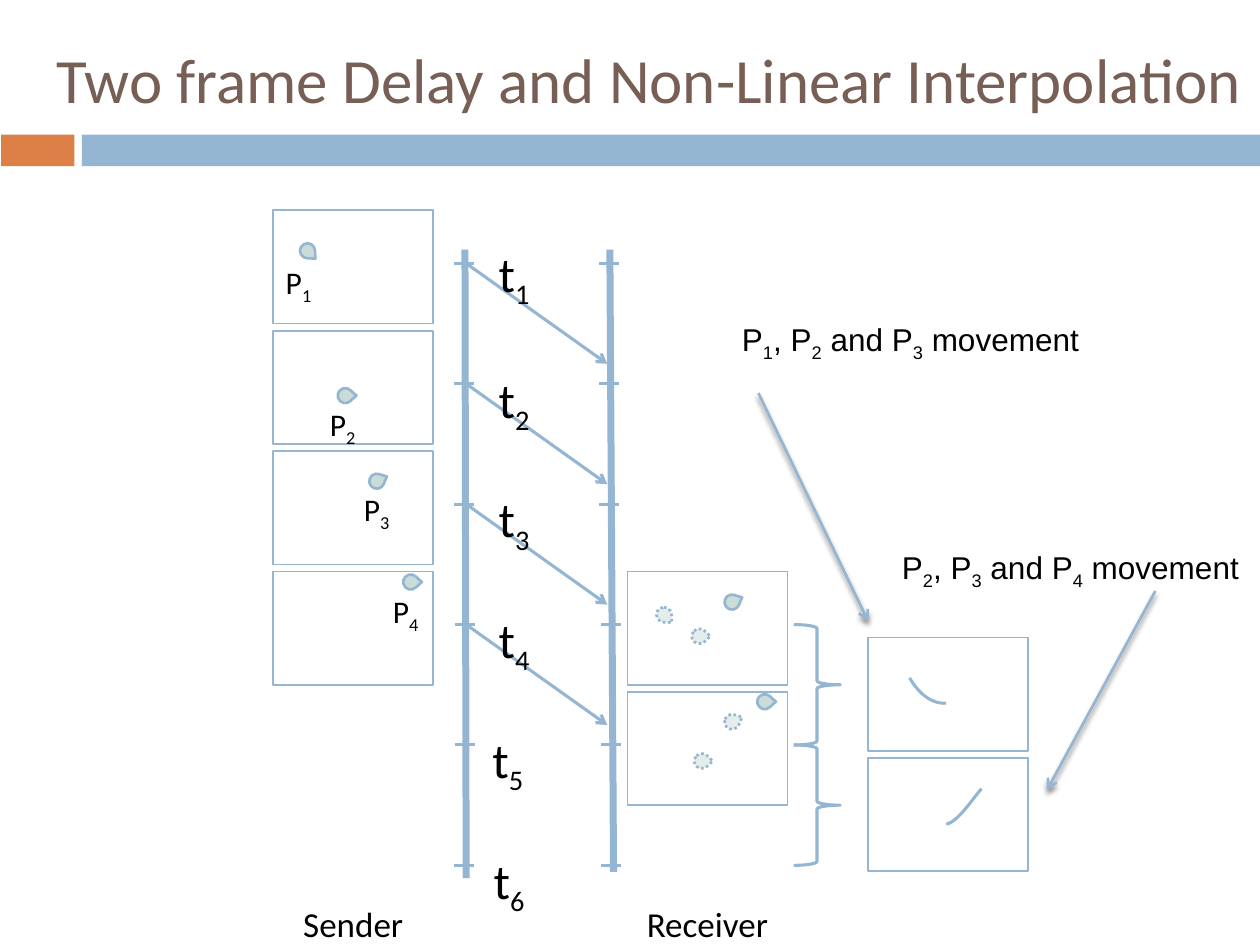
from dataclasses import dataclass

from lxml import etree
from pptx import Presentation
from pptx.dml.color import RGBColor
from pptx.enum.dml import MSO_LINE
from pptx.enum.shapes import MSO_CONNECTOR, MSO_SHAPE
from pptx.enum.text import MSO_ANCHOR, MSO_AUTO_SIZE, PP_ALIGN
from pptx.oxml.ns import qn
from pptx.util import Pt

BLUE = RGBColor(0x94, 0xB6, 0xD2)
ORANGE = RGBColor(0xDD, 0x80, 0x47)
PALE = RGBColor(0xCA, 0xDC, 0xD8)
BROWN = RGBColor(0x77, 0x5F, 0x55)
BLACK = RGBColor(0, 0, 0)

RECT, DROP, BRACE = MSO_SHAPE.RECTANGLE, MSO_SHAPE.TEAR, MSO_SHAPE.RIGHT_BRACE
STRAIGHT = MSO_CONNECTOR.STRAIGHT
DOTTED = MSO_LINE.ROUND_DOT
LEFT, CENTER = PP_ALIGN.LEFT, PP_ALIGN.CENTER
TOP, MIDDLE = MSO_ANCHOR.TOP, MSO_ANCHOR.MIDDLE
GROW, FIXED = MSO_AUTO_SIZE.SHAPE_TO_FIT_TEXT, MSO_AUTO_SIZE.NONE

# Grid of time steps, in points
PITCH = 68.8
FRAME_W, FRAME_H = 91.4, 64.8
FRAME_TOP, TICK_TOP = 120.2, 150.5
TICK_W = 11.5
DROP_SIZE = 8.6


@dataclass
class Label:
    """Text in which an underscore makes the next character a subscript."""
    text: str
    x: float
    y: float
    w: float
    h: float
    size: float
    font: str = "Calibri"
    color: RGBColor = BLACK
    align: PP_ALIGN = LEFT
    anchor: MSO_ANCHOR = TOP
    wrap: bool = True
    fit: MSO_AUTO_SIZE = GROW


@dataclass
class Particle:
    x: float
    y: float
    angle: float
    past: bool = False


@dataclass
class Axis:
    x1: float
    x2: float
    bottom: float
    ticks: tuple[float, ...]


def add_box(slide, kind, x: float, y: float, w: float, h: float,
            fill: RGBColor | None = None, width: float = 0):
    s = slide.shapes.add_shape(kind, Pt(x), Pt(y), Pt(w), Pt(h))
    s.shadow.inherit = False
    if fill is None:
        s.fill.background()
    else:
        s.fill.solid()
        s.fill.fore_color.rgb = fill
    if width:
        s.line.color.rgb = BLUE
        s.line.width = Pt(width)
    else:
        s.line.fill.background()
    return s


def add_frame(slide, x: float, y: float) -> None:
    add_box(slide, RECT, x, y, FRAME_W, FRAME_H, width=1)


def add_particle(slide, p: Particle) -> None:
    s = add_box(slide, DROP, p.x, p.y, DROP_SIZE, DROP_SIZE, PALE, 1.5)
    s.adjustments[0] = 1.06
    s.rotation = p.angle
    if p.past:
        s.line.dash_style = DOTTED
        color = s._element.spPr.find(f"{qn('a:solidFill')}/{qn('a:srgbClr')}")
        etree.SubElement(color, qn("a:alpha"), val="49000")


def add_line(slide, x1: float, y1: float, x2: float, y2: float, width: float = 1.75,
             arrow: bool = False, shadow: bool = False) -> None:
    c = slide.shapes.add_connector(STRAIGHT, Pt(x1), Pt(y1), Pt(x2), Pt(y2))
    c.line.color.rgb = BLUE
    c.line.width = Pt(width)
    if arrow:
        etree.SubElement(c.line._get_or_add_ln(), qn("a:tailEnd"), type="arrow")
    effects = etree.SubElement(c._element.spPr, qn("a:effectLst"))
    if shadow:
        outer = etree.SubElement(effects, qn("a:outerShdw"), blurRad=str(Pt(3)),
                                 dist=str(Pt(2.4)), dir="5400000", rotWithShape="0")
        color = etree.SubElement(outer, qn("a:srgbClr"), val=str(BLACK))
        etree.SubElement(color, qn("a:alpha"), val="45000")


def add_curve(slide, *points: tuple[float, float], steps: int = 16) -> None:
    """Draw a cubic Bezier curve through sampled points."""
    def at(t: float) -> tuple[int, int]:
        weights = ((1 - t) ** 3, 3 * t * (1 - t) ** 2, 3 * t * t * (1 - t), t ** 3)
        return tuple(Pt(sum(w * p[i] for w, p in zip(weights, points))) for i in (0, 1))

    builder = slide.shapes.build_freeform(*at(0))
    builder.add_line_segments([at(i / steps) for i in range(1, steps + 1)], close=False)
    s = builder.convert_to_shape()
    s.shadow.inherit = False
    s.fill.background()
    s.line.color.rgb = BLUE
    s.line.width = Pt(1.75)


def add_label(slide, label: Label) -> None:
    s = slide.shapes.add_textbox(Pt(label.x), Pt(label.y), Pt(label.w), Pt(label.h))
    tf = s.text_frame
    tf.word_wrap = label.wrap
    tf.auto_size = label.fit
    tf.vertical_anchor = label.anchor
    p = tf.paragraphs[0]
    p.alignment = label.align

    def add_run(text: str, subscript: bool) -> None:
        r = p.add_run()
        r.text = text
        r.font.size = Pt(label.size)
        r.font.name = label.font
        r.font.color.rgb = label.color
        if subscript:
            r.font._element.set("baseline", "-25000")

    first, *rest = label.text.split("_")
    add_run(first, False)
    for part in rest:
        add_run(part[0], True)
        if part[1:]:
            add_run(part[1:], False)


def main() -> None:
    prs = Presentation()
    prs.slide_width, prs.slide_height = Pt(720), Pt(540)
    slide = prs.slides.add_slide(prs.slide_layouts[6])

    # Title and band
    add_box(slide, RECT, 0.7, 77, 41.8, 18, ORANGE)
    add_box(slide, RECT, 46.8, 77, 673.2, 18, BLUE)
    add_label(slide, Label("Two frame Delay and Non-Linear Interpolation", 25.2, 18, 694.8,
                           53.3, 36, color=BROWN, anchor=MIDDLE, fit=FIXED))

    # Time axes with ticks
    for axis in (Axis(265.7, 266.4, 501.8, (259.2, 259.2, 259.2, 259.9, 259.9, 259.2)),
                 Axis(348.5, 350.6, 498.2, (342, 342, 342, 343.4, 343.4, 343.4))):
        add_line(slide, axis.x1, 142.6, axis.x2, axis.bottom, 4)
        for i, x in enumerate(axis.ticks):
            y = TICK_TOP + i * PITCH
            add_line(slide, x, y, x + TICK_W, y)

    # Sender frames and messages, receiver frames, interpolated frames
    for i in range(4):
        add_frame(slide, 156.2, FRAME_TOP + i * PITCH)
        y = TICK_TOP + i * PITCH
        add_line(slide, 266.4, y, 347, y + 57.4, arrow=True)
    for i in range(2):
        add_frame(slide, 358.6, FRAME_TOP + (3 + i) * PITCH)
        add_frame(slide, 496.1, 364.3 + i * PITCH)
        add_box(slide, BRACE, 453.6, TICK_TOP + (3 + i) * PITCH, 26.6, PITCH, width=1.75)

    # Particles: sent, received, and past positions
    for particle in (
        Particle(171.4, 139, 90), Particle(193, 221.8, 44.6),
        Particle(211, 270.7, 20.1), Particle(230.4, 328.3, 44.6),
        Particle(414, 339.8, 20.1), Particle(432.7, 396.7, 44.6),
        Particle(375.1, 347, 90, True), Particle(395.3, 359.3, 44.6, True),
        Particle(414, 408.2, 20.1, True), Particle(396.7, 430.6, 44.6, True),
    ):
        add_particle(slide, particle)

    # Interpolated movement
    add_curve(slide, (519.8, 387.4), (525.6, 397.4), (533.5, 402.5), (540.7, 401.8))
    add_curve(slide, (540.7, 470.9), (547.2, 470.2), (557.3, 454.3), (560.9, 450.7))
    add_line(slide, 433.4, 224.6, 496.1, 355, 1.5, arrow=True, shadow=True)
    add_line(slide, 660.2, 337.7, 598.3, 451.4, 1.5, arrow=True, shadow=True)

    # Labels
    for i, (x, y) in enumerate(((156.2, 146.9), (181.4, 228.2), (200.9, 276.5), (217.4, 334.8)), 1):
        add_label(slide, Label(f"P_{i}", x, y, 34.6, 28.8, 18))
    for i, (x, y) in enumerate(((277.9, 135.4), (277.9, 207.4), (277.9, 275.8),
                                (277.9, 344.9), (274.3, 413.3), (275, 482.4)), 1):
        add_label(slide, Label(f"t_{i}", x, y, 43.9, 41, 28))
    for text, x in (("Sender", 159.8), ("Receiver", 362.2)):
        add_label(slide, Label(text, x, 511.9, 84.2, 31.7, 20, align=CENTER))
    for text, x, y in (("P_1, P_2 and P_3 movement", 416.9, 179.3),
                       ("P_2, P_3 and P_4 movement", 508.3, 309.6)):
        add_label(slide, Label(text, x, y, 211.7, 28.8, 18, "Arial", wrap=False))

    prs.save("out.pptx")


if __name__ == "__main__":
    main()
